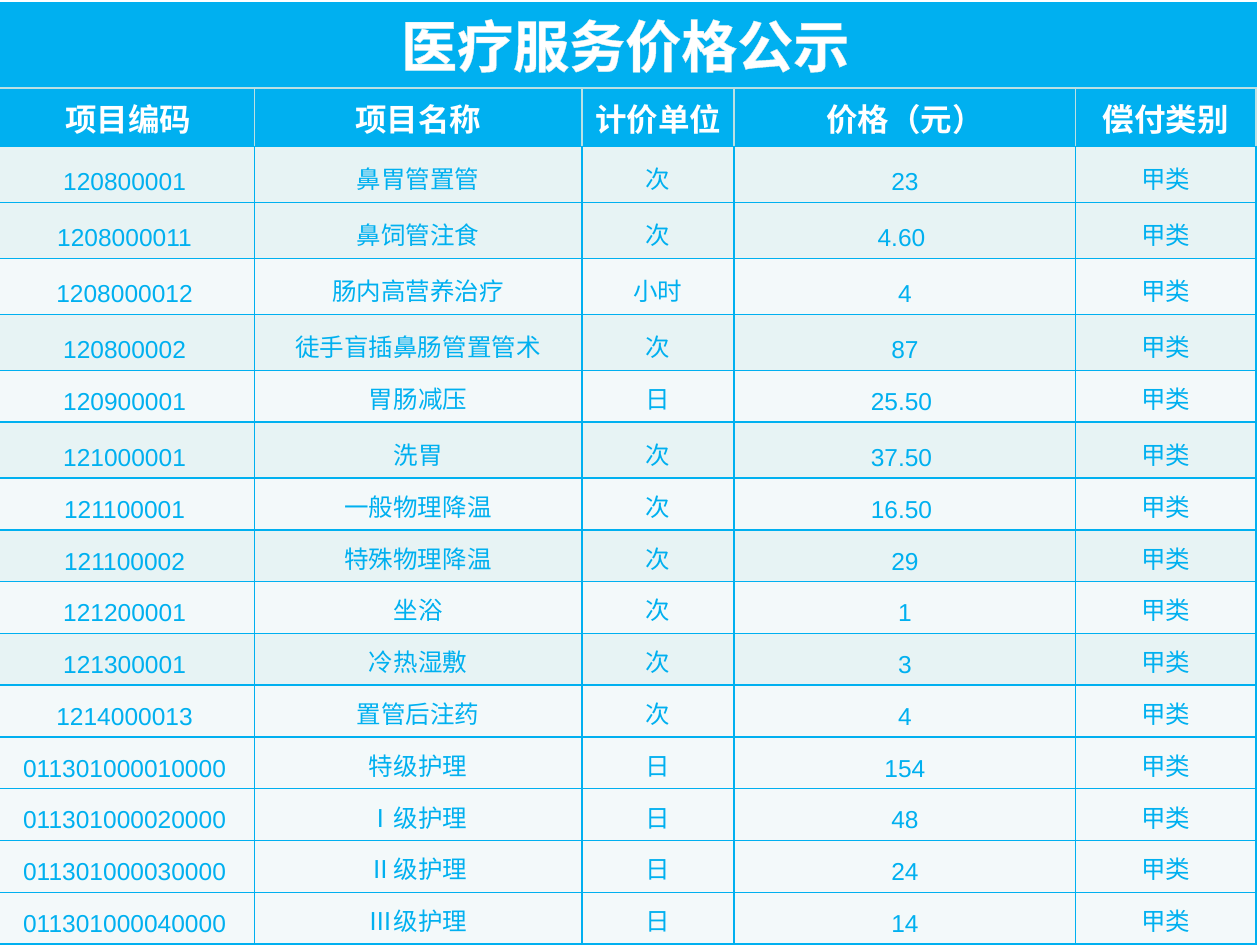
from lxml import etree
from pptx import Presentation
from pptx.dml.color import RGBColor
from pptx.enum import text
from pptx.oxml import ns
from pptx.util import Pt

COLORS = {
    "blue": "00B0F0",
    "white": "FFFFFF",
    "rule": "BBE0E3",
    "outline": "D9EDEE",
    "dark_band": "E7F3F4",
    "light_band": "F3F9FA",
}
FONT, NUMERAL_FONT = "Arial", "Noto Sans CJK SC"
COLUMN_WIDTHS = [148.2, 187.2, 87, 195.2, 103]
TITLE_HEIGHT, HEADER_HEIGHT, TALL, SHORT = 38, 29.6, 32, 29.6
HEADERS = [" 项目编码", "项目名称", "计价单位", "价格（元）", "偿付类别"]
CATEGORY = "甲类"
# code, name, unit, price, row height, band
SERVICES = [
    ("120800001", "鼻胃管置管", "次", "23", TALL, "dark_band"),
    ("1208000011", "鼻饲管注食", "次", "4.60 ", TALL, "dark_band"),
    ("1208000012", "肠内高营养治疗", "小时", "4", TALL, "light_band"),
    ("120800002", "徒手盲插鼻肠管置管术", "次", "87", TALL, "dark_band"),
    ("120900001", "胃肠减压", "日", "25.50 ", SHORT, "light_band"),
    ("121000001", "洗胃", "次", "37.50 ", TALL, "dark_band"),
    ("121100001", "一般物理降温", "次", "16.50 ", SHORT, "light_band"),
    ("121100002", "特殊物理降温", "次", "29", SHORT, "dark_band"),
    ("121200001", "坐浴", "次", "1", SHORT, "light_band"),
    ("121300001", "冷热湿敷", "次", "3", SHORT, "dark_band"),
    ("1214000013", "置管后注药", "次", "4", SHORT, "light_band"),
    ("011301000010000", "特级护理", "日", "154", SHORT, "light_band"),
    ("011301000020000", "Ⅰ级护理", "日", "48", SHORT, "light_band"),
    ("011301000030000", "Ⅱ级护理", "日", "24", SHORT, "light_band"),
    ("011301000040000", "Ⅲ级护理", "日", "14", SHORT, "light_band"),
]


def add_line(parent, tag, color, width):
    """Append a solid line element to cell or run properties."""
    line = etree.SubElement(parent, ns.qn(tag), w=str(Pt(width)))
    fill = etree.SubElement(line, ns.qn("a:solidFill"))
    etree.SubElement(fill, ns.qn("a:srgbClr"), val=COLORS[color])
    return line


def fill_cell(cell, words, size, color, band, bold=False, rules=""):
    """Write one cell; the sides named in rules get the pale border."""
    properties = cell._tc.get_or_add_tcPr()
    for side in "LRTB":
        add_line(properties, f"a:ln{side}", "rule" if side in rules else "blue", 1)
    cell.fill.solid()
    cell.fill.fore_color.rgb = RGBColor.from_string(COLORS[band])
    para = cell.text_frame.paragraphs[0]
    para.alignment = text.PP_ALIGN.CENTER
    pieces = [words[0], words[1:]] if words[0] in "ⅠⅡⅢ" else [words]
    for piece in pieces:
        span = para.add_run()
        span.text = piece
        span.font.name = NUMERAL_FONT if piece in "ⅠⅡⅢ" else FONT
        span.font.size = Pt(size)
        span.font.bold = bold
        span.font.color.rgb = RGBColor.from_string(COLORS[color])
    return para


deck = Presentation()
deck.slide_width, deck.slide_height = Pt(720), Pt(540)
page = deck.slides.add_slide(deck.slide_layouts[6])

heights = [TITLE_HEIGHT, HEADER_HEIGHT] + [service[4] for service in SERVICES]
frame = page.shapes.add_table(len(heights), len(COLUMN_WIDTHS), Pt(-2.9), Pt(1.4),
                              Pt(sum(COLUMN_WIDTHS)), Pt(sum(heights)))
table = frame.table
table.first_row = table.horz_banding = False
for column, width in zip(table.columns, COLUMN_WIDTHS):
    column.width = Pt(width)
for row, height in zip(table.rows, heights):
    row.height = Pt(height)

# Title across all columns
title = table.cell(0, 0)
title.merge(table.cell(0, len(COLUMN_WIDTHS) - 1))
title.vertical_anchor = text.MSO_ANCHOR.MIDDLE
para = fill_cell(title, "医疗服务价格公示", 32, "white", "blue", bold=True, rules="B")
para.line_spacing = 0.9
run_properties = para.runs[0].font._element
run_properties.insert(0, add_line(run_properties, "a:ln", "outline", 0.8))

# Column headings
for index, heading in enumerate(HEADERS):
    fill_cell(table.cell(1, index), heading, 18, "white", "blue", bold=True, rules="LTR")

# Price list
for row_index, (*values, height, band) in enumerate(SERVICES, start=2):
    for index, value in enumerate(values + [CATEGORY]):
        cell = table.cell(row_index, index)
        cell.vertical_anchor = text.MSO_ANCHOR.BOTTOM
        cell.margin_left = cell.margin_right = cell.margin_top = Pt(0.7)
        cell.margin_bottom = Pt(3.6)
        fill_cell(cell, value, 14, "blue", band)

deck.save("out.pptx")
